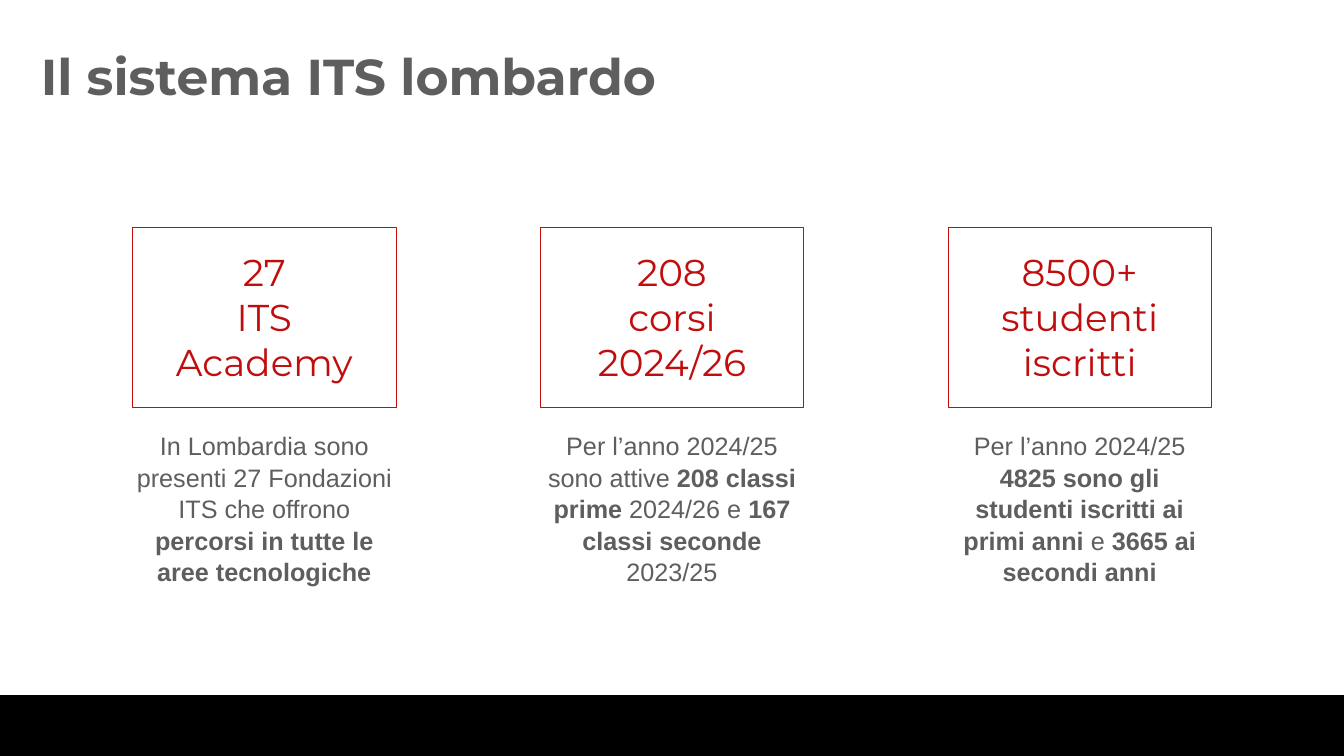
import pptx
import pptx.util
import pptx.dml.color
import pptx.enum.shapes
import pptx.enum.text

Inches, Pt = pptx.util.Inches, pptx.util.Pt
ALIGN = pptx.enum.text.PP_ALIGN
ANCHOR = pptx.enum.text.MSO_ANCHOR
RECT = pptx.enum.shapes.MSO_SHAPE.RECTANGLE

# Content: box lines, then text runs as (text, bold)
TITLE = "Il sistema ITS lombardo"
CARDS = [
    (["27", "ITS Academy"],
     [("In Lombardia sono presenti 27 Fondazioni ITS che offrono ", False),
      ("percorsi in tutte le aree tecnologiche", True)]),
    (["208", "corsi", "2024/26"],
     [("Per l’anno 2024/25 sono attive ", False),
      ("208 classi prime", True),
      (" 2024/26 e ", False),
      ("167 classi seconde", True),
      (" 2023/25", False)]),
    (["8500+", "studenti", "iscritti"],
     [("Per l’anno 2024/25 ", False),
      ("4825 sono gli studenti iscritti ai primi anni", True),
      (" e ", False),
      ("3665 ai secondi anni", True)]),
]
COLORS = {"gray": "5E5E5E", "red": "C00D0D", "black": "000000"}

# Layout in inches
WIDTH, HEIGHT = 26.67, 15
BAND = 1.21
CARD_W, PITCH = 5.23, 8.09
LEFT = (WIDTH - CARD_W - PITCH * (len(CARDS) - 1)) / 2
BOX_TOP, BOX_H = 4.5, 3.59
TEXT_TOP, TEXT_H = 8.52, 3.03


def color(name):
    return pptx.dml.color.RGBColor.from_string(COLORS[name])


def style(run, face, size, tint, bold=False):
    font = run.font
    font.name, font.size, font.bold = face, Pt(size), bold
    font.color.rgb = color(tint)


def setup(frame, side, top, anchor=ANCHOR.TOP):
    frame.word_wrap = True
    frame.vertical_anchor = anchor
    frame.margin_left = frame.margin_right = frame.margin_bottom = Inches(side)
    frame.margin_top = Inches(top)


def add_text(slide, x, y, w, h):
    return slide.shapes.add_textbox(
        Inches(x), Inches(y), Inches(w), Inches(h)).text_frame


def add_rect(slide, x, y, w, h):
    rect = slide.shapes.add_shape(
        RECT, Inches(x), Inches(y), Inches(w), Inches(h))
    rect.shadow.inherit = False
    return rect


def add_box(slide, x, lines):
    box = add_rect(slide, x, BOX_TOP, CARD_W, BOX_H)
    box.fill.background()
    box.line.color.rgb = color("red")
    box.line.width = Pt(0.75)
    frame = box.text_frame
    setup(frame, 0.27, 0.45)
    frame.text = "\n".join(lines)
    for para in frame.paragraphs:
        para.alignment = ALIGN.CENTER
        style(para.runs[0], "Montserrat", 53.3, "red")


def add_body(slide, x, parts):
    frame = add_text(slide, x, TEXT_TOP, CARD_W, TEXT_H)
    setup(frame, 0, 0)
    para = frame.paragraphs[0]
    para.alignment = ALIGN.CENTER
    para.line_spacing = 1.04
    for text, bold in parts:
        run = para.add_run()
        run.text = text
        style(run, "Arial", 36, "gray", bold)


def main():
    deck = pptx.Presentation()
    deck.slide_width, deck.slide_height = Inches(WIDTH), Inches(HEIGHT)
    slide = deck.slides.add_slide(deck.slide_layouts[6])

    # Title
    frame = add_text(slide, 0.75, 0.84, 25.2, 1.32)
    setup(frame, 0.06, 0.06, ANCHOR.MIDDLE)
    frame.text = TITLE
    style(frame.paragraphs[0].runs[0], "Montserrat", 72, "gray", True)

    # Bottom band
    band = add_rect(slide, 0, HEIGHT - BAND, WIDTH, BAND)
    band.fill.solid()
    band.fill.fore_color.rgb = color("black")
    band.line.fill.background()

    # Cards
    for i, (lines, parts) in enumerate(CARDS):
        x = LEFT + i * PITCH
        add_box(slide, x, lines)
        add_body(slide, x, parts)

    deck.save("out.pptx")


if __name__ == "__main__":
    main()
